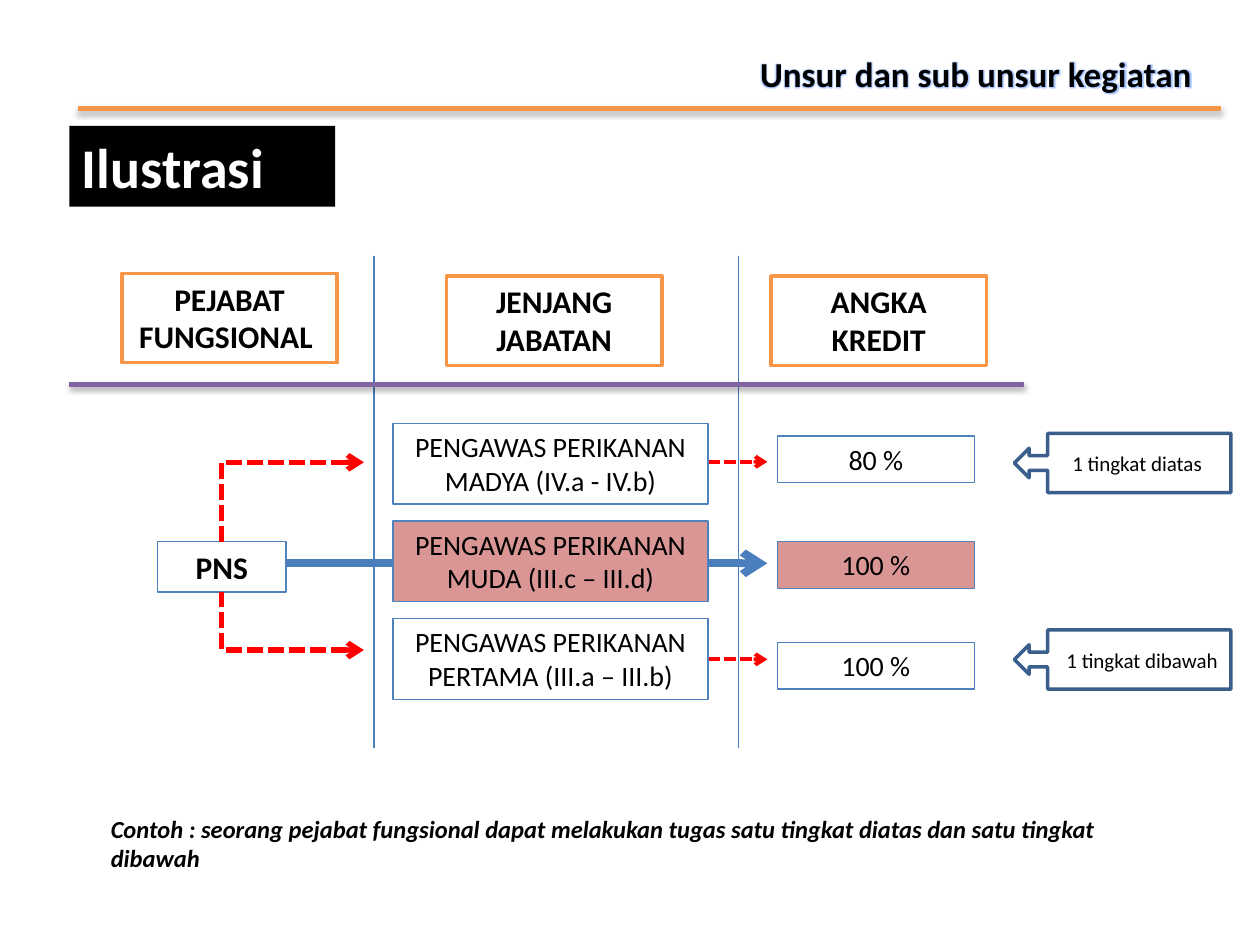
from lxml import etree
from pptx import Presentation
from pptx.dml import color as dml
from pptx.enum import dml as dash, shapes, text
from pptx.oxml import ns
from pptx.util import Pt

BLUE, EDGE, RED, ORANGE, PINK = "4F81BD", "4B7EBC", "FF0000", "F79646", "D99694"
KIND = shapes.MSO_SHAPE
LINK = shapes.MSO_CONNECTOR
SIDE = text.PP_ALIGN
ANCHOR = text.MSO_ANCHOR


def hue(code):
    return dml.RGBColor.from_string(code)


def node(up, tag, **attrs):
    return etree.SubElement(up, ns.qn(tag), {k: str(v) for k, v in attrs.items()})


def tint(up, tag, code, alpha, **attrs):
    part = node(up, tag, **attrs)
    node(node(part, "a:srgbClr", val=code), "a:alpha", val=alpha * 1000)


def write(shape, words, size=16, color="000000", bold=False, italic=False,
          align=SIDE.CENTER, anchor=ANCHOR.TOP):
    frame = shape.text_frame
    frame.word_wrap = True
    frame.vertical_anchor = anchor
    para = frame.paragraphs[0]
    para.alignment = align
    run = para.add_run()
    run.text = words
    font = run.font
    font.size, font.bold, font.italic = Pt(size), bold, italic
    font.color.rgb = hue(color)
    font.name = "Calibri"
    return run


def label(slide, box, words, **form):
    return write(slide.shapes.add_textbox(*map(Pt, box)), words, **form)


def block(slide, box, fill="FFFFFF", line=BLUE, width=0.75, kind=KIND.RECTANGLE):
    shape = slide.shapes.add_shape(kind, *map(Pt, box))
    shape.shadow.inherit = False
    if fill:
        shape.fill.solid()
        shape.fill.fore_color.rgb = hue(fill)
    else:
        shape.fill.background()
    if line:
        shape.line.color.rgb = hue(line)
        shape.line.width = Pt(width)
    else:
        shape.line.fill.background()
    return shape


def stroke(slide, ends, color, width, dashed=False, arrow=None, bent=False, shade=False):
    kind = LINK.ELBOW if bent else LINK.STRAIGHT
    link = slide.shapes.add_connector(kind, *map(Pt, ends))
    link.line.color.rgb = hue(color)
    link.line.width = Pt(width)
    if dashed:
        link.line.dash_style = dash.MSO_LINE.SQUARE_DOT
    props = link._element.spPr
    if bent:
        props.find(ns.qn("a:prstGeom")).set("prst", "bentConnector2")
    if arrow:
        node(props.find(ns.qn("a:ln")), arrow, type="arrow")
    effect = node(props, "a:effectLst")
    if shade:
        tint(effect, "a:outerShdw", "000000", 35, blurRad=Pt(3.1), dist=Pt(1.8),
             dir=5400000, rotWithShape=0)


def banner(slide, x, y, w, h):
    stroke(slide, (x, y + 62, x + w, y + 62), ORANGE, 3, shade=True)
    run = label(slide, (x + 136, y, 507.6, h), "Unsur dan sub unsur kegiatan",
                size=20, bold=True, align=SIDE.RIGHT, anchor=ANCHOR.MIDDLE)
    fill = run._r.rPr.find(ns.qn("a:solidFill"))
    effect = etree.Element(ns.qn("a:effectLst"))
    tint(effect, "a:glow", "6699FF", 60, rad=Pt(3))
    fill.addnext(effect)


def topic(slide, *box):
    write(block(slide, box, "000000", None), "Ilustrasi", size=32,
          color="FFFFFF", bold=True, align=SIDE.LEFT)


def heads(slide, x, y, w, h):
    for left in (x + 174.2, x + 382.3):
        stroke(slide, (left, y, left, y + h), EDGE, 0.75)
    stroke(slide, (x, y + 73.5, x + w, y + 73.5), "8064A2", 3, shade=True)
    titles = ("PEJABAT FUNGSIONAL ", "JENJANG JABATAN", "ANGKA KREDIT")
    for i, (title, drop) in enumerate(zip(titles, (10, 11.5, 11.5))):
        box = block(slide, (x + 30 + i * 185.5, y + drop, 123.1, 51.1), line=ORANGE, width=2)
        write(box, title, size=18, bold=True)


def flow(slide, x, y):
    stroke(slide, (x + 62, y + 80, x + 348.5, y + 80), EDGE, 4.5, arrow="a:tailEnd")
    write(block(slide, (x, y + 67.7, 73.4, 28.8)), "PNS", size=18, bold=True)
    for tip, base in ((22.3, 67.7), (129.6, 96.5)):
        stroke(slide, (x + 118, y + tip, x + 36.7, y + base), RED, 3,
               dashed=True, arrow="a:headEnd", bent=True)
    rows = (
        ("PENGAWAS PERIKANAN MADYA (IV.a - IV.b)", "80 %", 7.2, "FFFFFF"),
        ("PENGAWAS PERIKANAN MUDA (III.c – III.d)", "100 %", 67.7, PINK),
        ("PENGAWAS PERIKANAN PERTAMA (III.a – III.b)", "100 %", 125.3, "FFFFFF"),
    )
    for i, (job, rate, drop, fill) in enumerate(rows):
        write(block(slide, (x + 134.6, y + i * 55.8, 180, 46.1), fill), job)
        write(block(slide, (x + 354.2, y + drop, 112.5, 26.6), fill), rate)
    for mid in (22, 134.9):
        stroke(slide, (x + 315, y + mid, x + 348.5, y + mid), RED, 2.25,
               dashed=True, arrow="a:tailEnd")


def callout(slide, x, y, w, h, words, wide):
    shape = block(slide, (x, y, w, h), None, "3A5F8C", 2, KIND.LEFT_ARROW_CALLOUT)
    for i, value in enumerate((0.25, 0.25, 0.25, 0.846)):
        shape.adjustments[i] = value
    label(slide, (x + 22.3, y + 6.2, wide, 21.8), words, size=12)


def note(slide, *box):
    label(slide, box, "Contoh : seorang pejabat fungsional dapat melakukan tugas "
          "satu tingkat diatas dan satu tingkat dibawah",
          size=14, bold=True, italic=True, align=SIDE.LEFT)


def main():
    deck = Presentation()
    deck.slide_width, deck.slide_height = Pt(720), Pt(540)
    slide = deck.slides.add_slide(deck.slide_layouts[6])
    topic(slide, 39.6, 72, 151.9, 46.1)
    heads(slide, 39.6, 146.2, 545.8, 281.5)
    flow(slide, 90, 241.9)
    banner(slide, 44.6, 0, 653, 84.2)
    note(slide, 56.2, 461.5, 613.4, 41)
    callout(slide, 579.6, 247.7, 123.8, 33.8, "1 tingkat diatas", 95.8)
    callout(slide, 579.6, 360, 123.8, 33.8, "1 tingkat dibawah", 101.5)
    deck.save("out.pptx")


if __name__ == "__main__":
    main()
